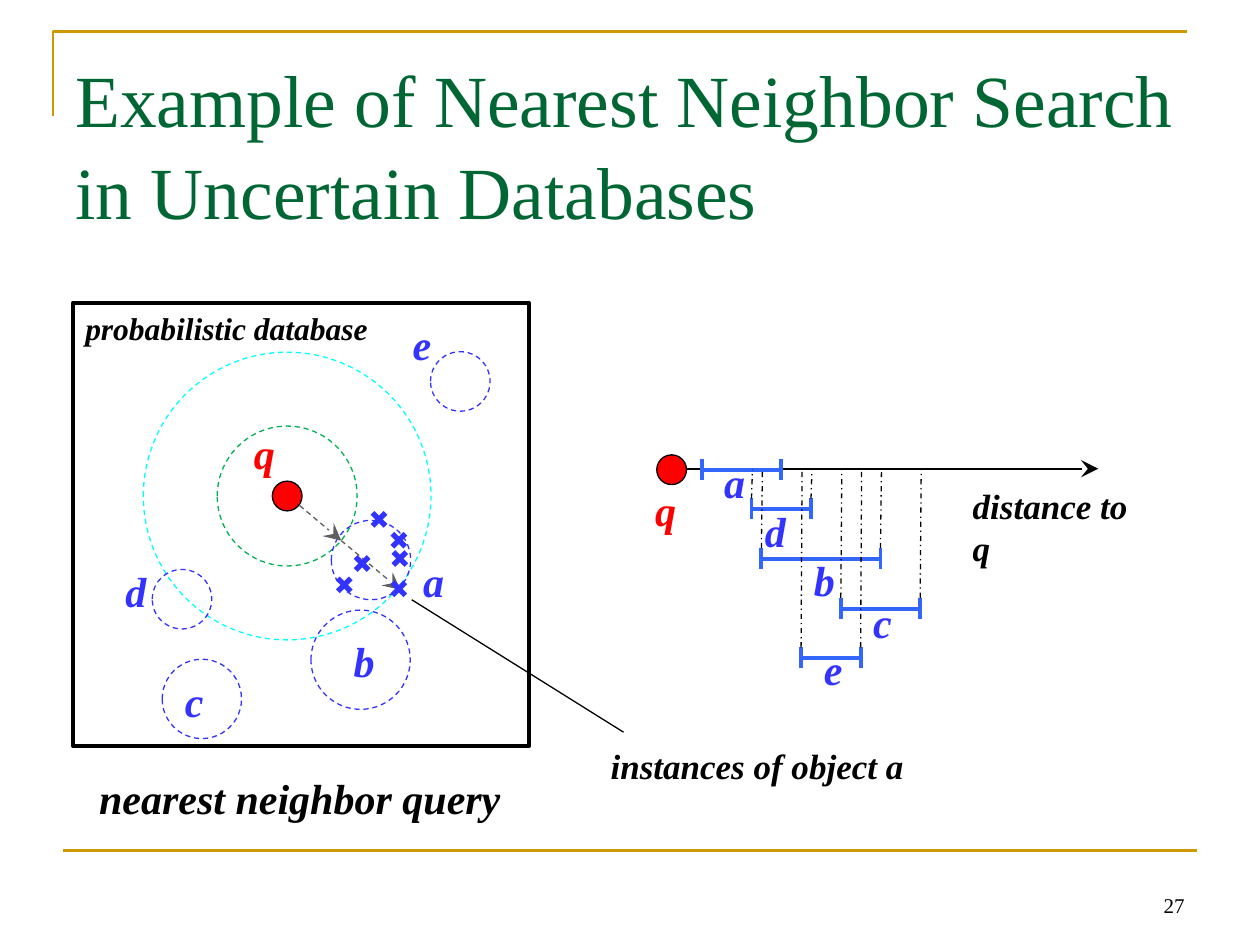
import dataclasses

import pptx
import pptx.dml.color
import pptx.enum.dml
import pptx.enum.shapes
import pptx.enum.text
import pptx.oxml
import pptx.oxml.ns
import pptx.util

Cm, Pt = pptx.util.Cm, pptx.util.Pt
SHAPE = pptx.enum.shapes.MSO_SHAPE
DASH = pptx.enum.dml.MSO_LINE
ALIGN = pptx.enum.text.PP_ALIGN
ANCHOR = pptx.enum.text.MSO_ANCHOR


@dataclasses.dataclass(frozen=True)
class Theme:
    font: str = "Times New Roman"
    black: str = "000000"
    title: str = "006633"
    frame: str = "CC9900"
    query: str = "FF0000"
    item: str = "3333FF"
    interval: str = "3366FF"
    near: str = "00B050"
    far: str = "00FFFF"
    arrow: str = "5F5F5F"
    title_size: int = 42
    label_size: int = 24
    note_size: int = 20
    small_size: int = 18
    number_size: int = 12


T = Theme()


def rgb(color):
    return pptx.dml.color.RGBColor.from_string(color)


def set_line(sp, color, width, dash=None):
    sp.line.color.rgb = rgb(color)
    sp.line.width = Pt(width)
    if dash:
        sp.line.dash_style = dash


def add_line(shapes, x1, y1, x2, y2, color, width, dash=None, arrow=False):
    cn = shapes.add_connector(pptx.enum.shapes.MSO_CONNECTOR.STRAIGHT,
                              Cm(x1), Cm(y1), Cm(x2), Cm(y2))
    set_line(cn, color, width, dash)
    if arrow:
        tail = pptx.oxml.parse_xml(
            f'<a:tailEnd {pptx.oxml.ns.nsdecls("a")} type="stealth" w="lg" len="lg"/>')
        cn.line._get_or_add_ln().append(tail)
    cn._element.spPr.append(
        pptx.oxml.parse_xml(f'<a:effectLst {pptx.oxml.ns.nsdecls("a")}/>'))


def add_outline(shapes, kind, x, y, w, h, color, width, dash=None, fill=None):
    sp = shapes.add_shape(kind, Cm(x), Cm(y), Cm(w), Cm(h))
    sp.shadow.inherit = False
    if fill:
        sp.fill.solid()
        sp.fill.fore_color.rgb = rgb(fill)
    else:
        sp.fill.background()
    set_line(sp, color, width, dash)


def add_circle(shapes, cx, cy, d, color, dash=DASH.DASH, fill=None):
    add_outline(shapes, SHAPE.OVAL, cx - d / 2, cy - d / 2, d, d, color, 0.75, dash, fill)


def add_text(shapes, text, x, y, w, h, size, color, italic=True, wrap=False):
    """Add one paragraph; italic labels are also bold."""
    tf = shapes.add_textbox(Cm(x), Cm(y), Cm(w), Cm(h)).text_frame
    tf.word_wrap = wrap
    p = tf.paragraphs[0]
    p.text = text
    p.font.name, p.font.size, p.font.color.rgb = T.font, Pt(size), rgb(color)
    p.font.bold = p.font.italic = italic
    return tf


def add_label(shapes, text, x, y):
    color = T.query if text == "q" else T.item
    add_text(shapes, text, x, y, 0.9, 1.27, T.label_size, color)


def add_frame(s, x, y, w, h):
    """Draw the corner and foot lines, the title and the slide number."""
    fb = s.shapes.build_freeform(Cm(x), Cm(y + 1.7))
    fb.add_line_segments([(Cm(x), Cm(y)), (Cm(x + w), Cm(y))], close=False)
    corner = fb.convert_to_shape()
    corner.shadow.inherit = False
    corner.fill.background()
    set_line(corner, T.frame, 1.5)
    add_line(s.shapes, x + 0.2, y + h, x + w + 0.2, y + h, T.frame, 1.5)

    tf = add_text(s.shapes, "Example of Nearest Neighbor Search in Uncertain Databases",
                  x + 0.2, y + 0.13, w, 3.18, T.title_size, T.title, italic=False, wrap=True)
    tf.margin_top = Cm(0.25)
    tf.paragraphs[0].line_spacing = 1.04

    tf = add_text(s.shapes, "27", x + w - 5.72, y + h + 0.2, 5.92, 1.27,
                  T.number_size, T.black, italic=False, wrap=True)
    tf.vertical_anchor = ANCHOR.BOTTOM
    tf.paragraphs[0].alignment = ALIGN.RIGHT


def add_cross(s, cx, cy, r=0.13):
    group = s.shapes.add_group_shape().shapes
    for side in (r, -r):
        add_line(group, cx + side, cy - r, cx - side, cy + r, T.item, 3)


def add_database(s, x, y, w, h):
    """Draw the uncertain objects around the query point in a w by h box."""
    add_outline(s.shapes, SHAPE.RECTANGLE, x, y, w, h, T.black, 2.25)
    qx, qy = x + 4.32, y + 3.9
    add_circle(s.shapes, qx, qy, 0.6, T.black, None, T.query)
    add_circle(s.shapes, qx, qy, 2.82, T.near)
    add_circle(s.shapes, qx, qy, 5.8, T.far)
    add_label(s.shapes, "q", x + 3.4, y + 2.39)

    # name: circle centre, diameter, label corner
    objects = {
        "a": (6.01, 5.19, 1.6, 6.81, 4.98),
        "b": (5.8, 7.2, 2, 5.41, 6.58),
        "c": (2.6, 7.99, 1.6, 2.01, 7.39),
        "d": (2.2, 5.98, 1.2, 0.81, 5.18),
        "e": (7.81, 1.59, 1.2, 6.6, 0.2),
    }
    for name, (cx, cy, d, lx, ly) in objects.items():
        add_circle(s.shapes, x + cx, y + cy, d, T.item)
        add_label(s.shapes, name, x + lx, y + ly)

    stops = [(4.57, 4.09), (5.41, 4.8), (6.6, 5.79)]
    for (x1, y1), (x2, y2) in zip(stops, stops[1:]):
        add_line(s.shapes, x + x1, y + y1, x + x2, y + y2, T.arrow, 0.75, DASH.DASH, True)
    for cx, cy in [(6.17, 4.37), (6.57, 4.79), (5.83, 5.26),
                   (5.47, 5.69), (6.57, 5.77), (6.59, 5.16)]:
        add_cross(s, x + cx, y + cy)

    add_text(s.shapes, "probabilistic database", x, y, 6.27, 1.02, T.small_size, T.black)
    add_text(s.shapes, "nearest neighbor query", x + 0.28, y + h + 0.41, 8.69, 1.27,
             T.label_size, T.black)
    add_line(s.shapes, x + 6.83, y + 5.99, x + 11.1, y + 8.66, T.black, 0.75)
    add_text(s.shapes, "instances of object a", x + 10.59, y + 8.79, 6.45, 1.12,
             T.note_size, T.black)


def add_interval(s, x, y, length, drop):
    """Draw a capped interval, tied to the axis that lies drop above it."""
    group = s.shapes.add_group_shape().shapes
    add_line(group, x, y, x + length, y, T.interval, 2.25)
    for end in (x, x + length):
        add_line(group, end, y - 0.22, end, y + 0.2, T.interval, 2.25)
        if drop:
            add_line(s.shapes, end, y - 0.22, end + 0.02, y - drop,
                     T.black, 0.75, DASH.DASH_DOT)


def add_distance_axis(s, x, y, w):
    """Draw the distance ranges below an axis that starts at the query point."""
    add_line(s.shapes, x, y, x + w, y, T.black, 1, arrow=True)
    add_circle(s.shapes, x, y + 0.02, 0.6, T.black, None, T.query)
    add_label(s.shapes, "q", x - 0.58, y + 0.2)

    # name: interval start, length, depth below the axis, label corner
    intervals = {
        "a": (0, 1.6, 0, 0.81, -0.38),
        "d": (1, 1.2, 0.8, 1.63, 0.61),
        "b": (1.2, 2.4, 1.8, 2.62, 1.6),
        "c": (2.8, 1.6, 2.8, 3.81, 2.46),
        "e": (2, 1.2, 3.8, 2.82, 3.4),
    }
    for name, (start, length, depth, lx, ly) in intervals.items():
        add_interval(s, x + 0.61 + start, y + 0.02 + depth, length, depth)
        add_label(s.shapes, name, x + lx, y + ly)
    add_text(s.shapes, "distance to q", x + 5.82, y + 0.2, 4.14, 1.09,
             T.note_size, T.black, wrap=True)


def main():
    prs = pptx.Presentation()
    prs.slide_width, prs.slide_height = Cm(25.4), Cm(19.05)
    s = prs.slides.add_slide(prs.slide_layouts[6])
    add_frame(s, 1.07, 0.64, 22.86, 16.51)
    add_database(s, 1.47, 6.1, 9.2, 8.94)
    add_distance_axis(s, 13.54, 9.45, 8.6)
    prs.save("out.pptx")


if __name__ == "__main__":
    main()
